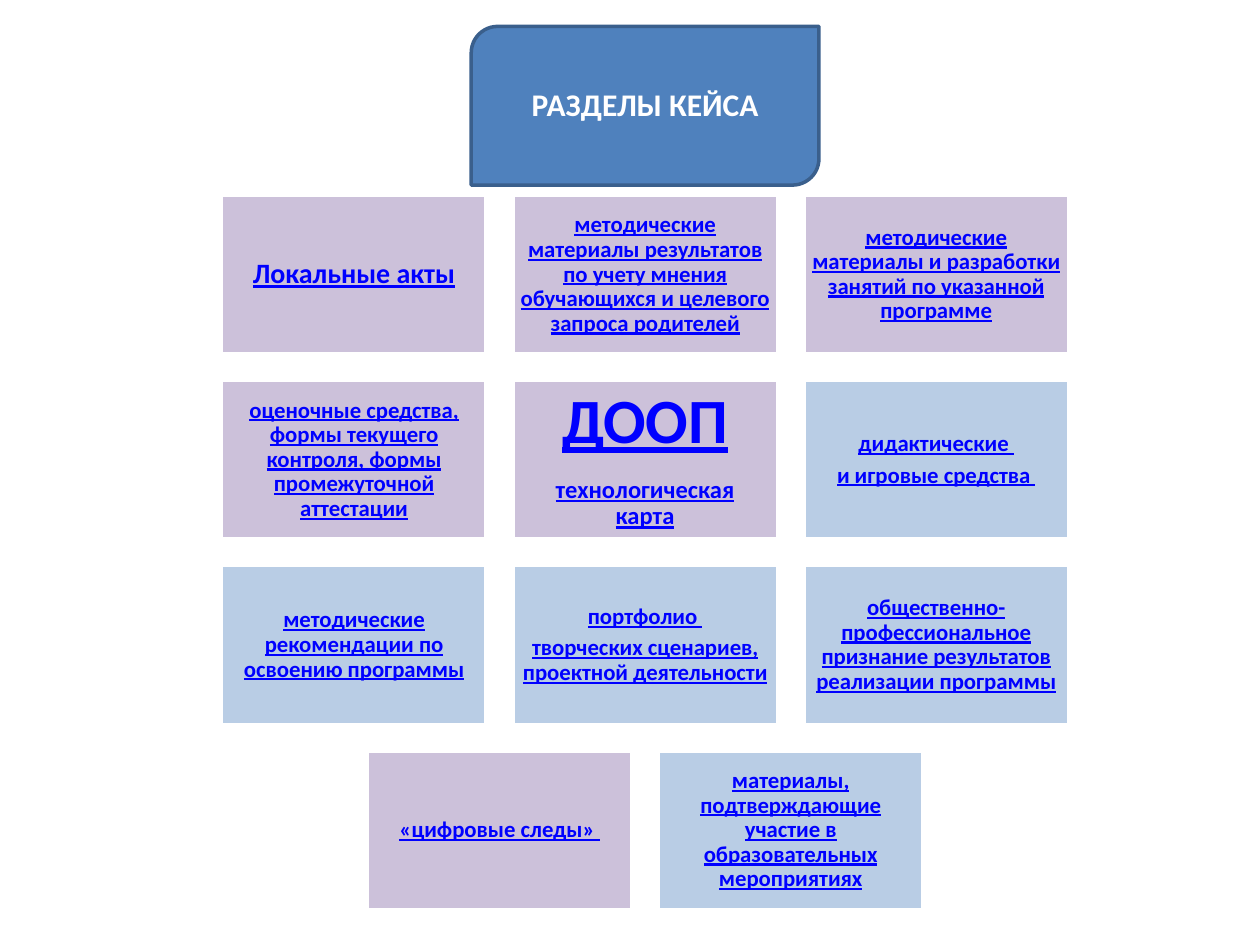
from dataclasses import dataclass

from pptx import Presentation
from pptx.dml.color import RGBColor
from pptx.enum.shapes import MSO_SHAPE as Shape
from pptx.enum.text import MSO_ANCHOR as Anchor, PP_ALIGN as Align
from pptx.util import Inches, Pt


@dataclass(frozen=True)
class Theme:
    font: str = "Calibri"
    lilac: str = "CCC1DA"
    sky: str = "B9CDE5"
    heading_fill: str = "4F81BD"
    heading_line: str = "3A5F8C"
    white: str = "FFFFFF"
    link: str = "0000FF"
    heading_size: int = 18
    hero_size: int = 36
    lead_size: int = 16
    sub_size: int = 14
    body_size: int = 13


class CaseSlide:
    """Draws the section cards of a case on one slide in one theme."""

    def __init__(self, slide, theme):
        self.slide = slide
        self.theme = theme

    def panel(self, preset, left, top, width, height, fill, line):
        panel = self.slide.shapes.add_shape(
            preset, Inches(left), Inches(top), Inches(width), Inches(height))
        panel.shadow.inherit = False
        panel.fill.solid()
        panel.fill.fore_color.rgb = RGBColor.from_string(fill)
        panel.line.color.rgb = RGBColor.from_string(line)
        panel.line.width = Pt(2)
        return panel

    def wording(self, frame, lines, color, inset, underline):
        frame.word_wrap = True
        frame.vertical_anchor = Anchor.MIDDLE
        frame.margin_left = frame.margin_right = Inches(inset)
        frame.margin_top = frame.margin_bottom = Inches(inset)
        for index, (words, size) in enumerate(lines):
            paragraph = frame.add_paragraph() if index else frame.paragraphs[0]
            paragraph.text = words
            paragraph.alignment = Align.CENTER
            paragraph.line_spacing = 0.9
            paragraph.space_before = Pt(0)
            paragraph.space_after = Pt(round(size * 0.31, 1))
            font = paragraph.font
            font.name, font.size = self.theme.font, Pt(size)
            font.bold, font.underline = True, underline
            font.color.rgb = RGBColor.from_string(color)

    def heading(self, words, left, top, width, height):
        theme = self.theme
        self.panel(Shape.ROUND_2_DIAG_RECTANGLE, left, top, width, height,
                   theme.heading_fill, theme.heading_line)
        title = self.slide.shapes.title
        title.left, title.top = Inches(left), Inches(top)
        title.width, title.height = Inches(width), Inches(height)
        self.slide.shapes._spTree.append(title._element)
        self.wording(title.text_frame, [(words, theme.heading_size)],
                     theme.white, 0.1, False)

    def card(self, lines, fill, left, top, width, height, inset):
        card = self.panel(Shape.RECTANGLE, left, top, width, height,
                          fill, self.theme.white)
        self.wording(card.text_frame, lines, self.theme.link, inset, True)

    def card_rows(self, rows, center, top, width=2.1, height=1.26, gap=0.21):
        for row_index, row in enumerate(rows):
            row_left = center - (len(row) * (width + gap) - gap) / 2
            row_top = top + row_index * (height + gap)
            for column, (fill, lines, inset) in enumerate(row):
                self.card(lines, fill, row_left + column * (width + gap),
                          row_top, width, height, inset)


def section(fill, *paragraphs, size=Theme.body_size, inset=0.05):
    return fill, [(words, size) for words in paragraphs], inset


def main():
    theme = Theme()
    lilac, sky = theme.lilac, theme.sky
    technology_card = (lilac, [("ДООП", theme.hero_size),
                               ("технологическая карта", theme.sub_size)], 0.15)
    rows = [
        [section(lilac, "Локальные акты", size=theme.lead_size, inset=0.07),
         section(lilac, "методические материалы результатов по учету мнения "
                        "обучающихся и целевого запроса родителей"),
         section(lilac, "методические материалы и разработки занятий "
                        "по указанной программе")],
        [section(lilac, "оценочные средства, формы текущего контроля, "
                        "формы промежуточной аттестации"),
         technology_card,
         section(sky, "дидактические ", "и игровые средства ")],
        [section(sky, "методические рекомендации по освоению программы"),
         section(sky, "портфолио ",
                 "творческих сценариев, проектной деятельности"),
         section(sky, "общественно-профессиональное признание результатов "
                      "реализации программы")],
        [section(lilac, "«цифровые следы» "),
         section(sky, "материалы, подтверждающие участие "
                      "в образовательных мероприятиях")],
    ]

    deck = Presentation()
    deck.slide_width, deck.slide_height = Inches(10), Inches(7.5)
    case = CaseSlide(deck.slides.add_slide(deck.slide_layouts[5]), theme)
    case.card_rows(rows, center=5.12, top=1.55)
    case.heading("РАЗДЕЛЫ КЕЙСА", 3.74, 0.21, 2.76, 1.26)
    deck.save("out.pptx")


if __name__ == "__main__":
    main()
